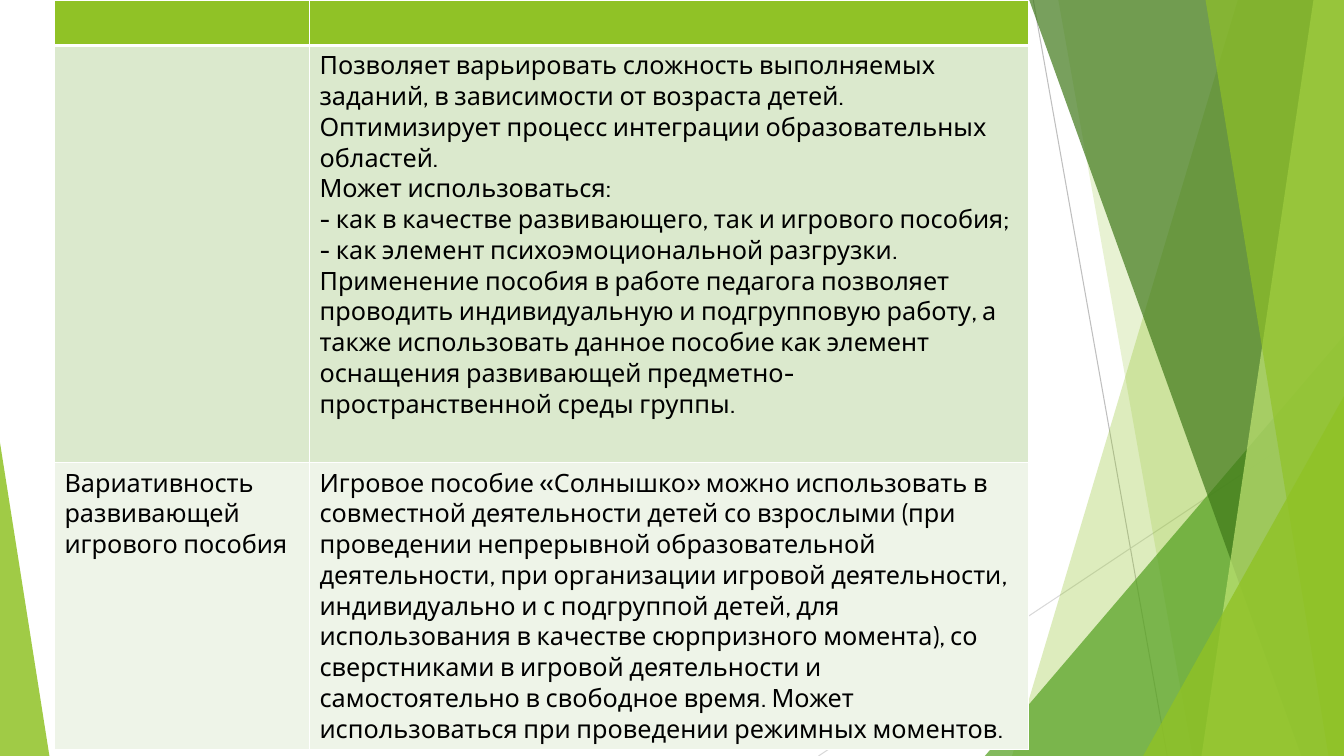
from lxml import etree
from pptx import Presentation
from pptx import util as u
from pptx.dml.color import RGBColor
from pptx.enum import shapes
from pptx.oxml.ns import qn

WIDTH, HEIGHT = u.Inches(13.333), u.Inches(7.5)
FONT = "Cabin"

LIME = RGBColor(0x90, 0xC2, 0x26)
GREEN = RGBColor(0x54, 0xA0, 0x21)
FOREST = RGBColor(0x3F, 0x78, 0x19)
PALE_LIME = RGBColor(0xC0, 0xE4, 0x74)
GREY = RGBColor(0xBF, 0xBF, 0xBF)
LIGHT_GREY = RGBColor(0xD9, 0xD9, 0xD9)
BAND_DARK = RGBColor(0xDB, 0xE9, 0xCD)
BAND_LIGHT = RGBColor(0xEE, 0xF4, 0xE8)
WHITE = RGBColor(0xFF, 0xFF, 0xFF)
BLACK = RGBColor(0, 0, 0)

COLUMNS = [18.98, 53.48]
ROWS = [6, 55.2, 37.33]
ROW_FILLS = [LIME, BAND_DARK, BAND_LIGHT]

USES = [
    "Позволяет варьировать сложность выполняемых заданий, в зависимости от возраста детей.",
    "Оптимизирует процесс интеграции образовательных областей.",
    "Может использоваться:",
    "- как в качестве развивающего, так и игрового пособия;",
    "- как элемент психоэмоциональной разгрузки.",
    "Применение пособия в работе педагога позволяет проводить индивидуальную и "
    "подгрупповую работу, а также использовать данное пособие как элемент оснащения "
    "развивающей предметно-пространственной среды группы.",
]
VARIETY = [
    "Игровое пособие «Солнышко» можно использовать в совместной деятельности детей "
    "со взрослыми (при проведении непрерывной образовательной деятельности, при "
    "организации игровой деятельности, индивидуально и с подгруппой детей, для "
    "использования в качестве сюрпризного момента), со сверстниками в игровой "
    "деятельности и самостоятельно в свободное время. Может использоваться при "
    "проведении режимных моментов."
]
CELL_TEXTS = [
    [[], []],
    [[], USES],
    [["Вариативность развивающей игрового пособия"], VARIETY],
]


def across(percent):
    return round(WIDTH * percent / 100)


def down(percent):
    return round(HEIGHT * percent / 100)


def paint(shape, color, opacity):
    shape.shadow.inherit = False
    shape.line.fill.background()
    shape.fill.solid()
    shape.fill.fore_color.rgb = color
    tint = shape.fill._xPr.find(qn("a:solidFill"))[0]
    etree.SubElement(tint, qn("a:alpha"), val=str(opacity * 1000))


def add_ray(page, start, end, color):
    ray = page.shapes.add_connector(
        shapes.MSO_CONNECTOR.STRAIGHT,
        across(start[0]), down(start[1]), across(end[0]), down(end[1]))
    ray.line.color.rgb = color
    ray.line.width = u.Pt(0.75)
    etree.SubElement(ray._element.spPr, qn("a:effectLst"))


def add_shard(page, top_left, bottom_left, color, opacity):
    outline = page.shapes.build_freeform(across(top_left), 0)
    outline.add_line_segments(
        [(WIDTH, 0), (WIDTH, HEIGHT), (across(bottom_left), HEIGHT)])
    paint(outline.convert_to_shape(), color, opacity)


def add_corner(page, left, right, top, apex, color, opacity):
    corner = page.shapes.add_shape(
        shapes.MSO_SHAPE.ISOSCELES_TRIANGLE,
        across(left), down(top), across(right - left), down(100 - top))
    corner.adjustments[0] = apex
    paint(corner, color, opacity)


def add_border(cell, side, points):
    border = etree.SubElement(
        cell._tc.get_or_add_tcPr(), qn("a:" + side), w=str(u.Pt(points)))
    fill = etree.SubElement(border, qn("a:solidFill"))
    etree.SubElement(fill, qn("a:srgbClr"), val=str(WHITE))


def format_cell(cell, lines, fill, bottom):
    for side, points in (("lnL", 1), ("lnR", 1), ("lnT", 1), ("lnB", bottom)):
        add_border(cell, side, points)
    cell.fill.solid()
    cell.fill.fore_color.rgb = fill
    cell.text = "\n".join(lines)
    for para in cell.text_frame.paragraphs:
        para.font.name = FONT
        para.font.size = u.Pt(18)
        para.font.color.rgb = BLACK


def add_uses_table(page):
    table = page.shapes.add_table(
        len(ROWS), len(COLUMNS), across(4.05), 0,
        across(sum(COLUMNS)), down(sum(ROWS))).table
    for column, share in zip(table.columns, COLUMNS):
        column.width = across(share)
    for index, row in enumerate(table.rows):
        row.height = down(ROWS[index])
        for cell, lines in zip(row.cells, CELL_TEXTS[index]):
            format_cell(cell, lines, ROW_FILLS[index], 3 if index == 0 else 1)


def main():
    deck = Presentation()
    deck.slide_width, deck.slide_height = WIDTH, HEIGHT
    page = deck.slides.add_slide(deck.slide_layouts[6])
    page.background.fill.solid()
    page.background.fill.fore_color.rgb = WHITE

    add_ray(page, (76.88, 0), (86.85, 100), GREY)
    add_ray(page, (100, 53.73), (60.9, 100), LIGHT_GREY)
    add_shard(page, 92.1, 75.3, LIME, 30)
    add_shard(page, 78.75, 88.73, LIME, 20)
    add_corner(page, 73.28, 100, 44.4, 1, GREEN, 72)
    add_shard(page, 76.58, 96.83, FOREST, 70)
    add_shard(page, 97.73, 89.4, PALE_LIME, 70)
    add_shard(page, 89.7, 98.85, LIME, 65)
    add_corner(page, 85.05, 100, 52.4, 1, LIME, 80)
    add_corner(page, 0, 3.68, 58.53, 0, LIME, 85)
    add_uses_table(page)

    deck.save("out.pptx")


if __name__ == "__main__":
    main()
